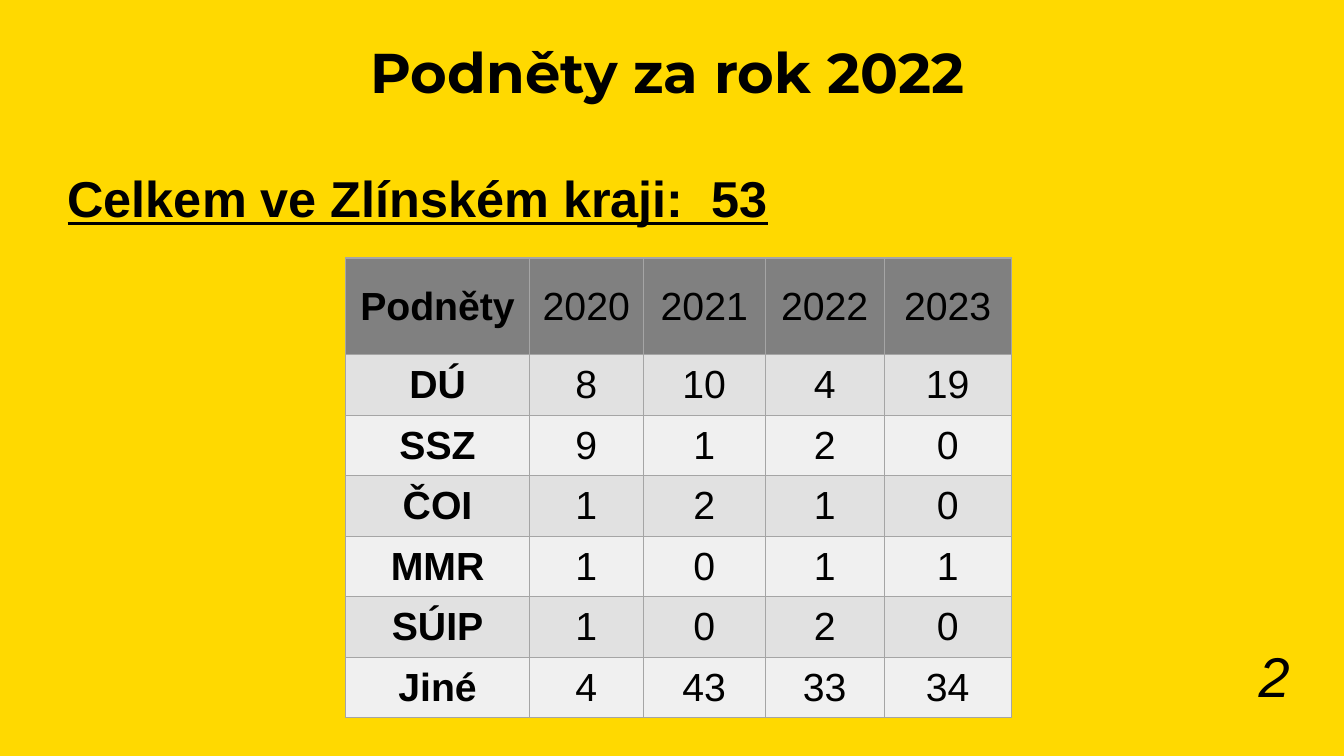
import pptx
import pptx.util
import pptx.dml.color
import pptx.enum.text
import pptx.oxml.ns
from lxml import etree

COLORS = {"background": "FFD900", "text": "000000", "header": "808080",
          "odd": "E1E1E1", "even": "F0F0F0", "border": "A5A5A5"}
ALIGN = pptx.enum.text.PP_ALIGN
ANCHOR = pptx.enum.text.MSO_ANCHOR
qn = pptx.oxml.ns.qn
Inches = pptx.util.Inches


def style(p, size, align, font="Arial", **flags):
    p.alignment = align
    for r in p.runs:
        r.font.name = font
        r.font.size = pptx.util.Pt(size)
        r.font.color.rgb = pptx.dml.color.RGBColor.from_string(COLORS["text"])
        for name, value in flags.items():
            setattr(r.font, name, value)


def place(sp, left, top, width, height, anchor):
    sp.left, sp.top = Inches(left), Inches(top)
    sp.width, sp.height = Inches(width), Inches(height)
    tf = sp.text_frame
    tf.word_wrap = True
    tf.auto_size = pptx.enum.text.MSO_AUTO_SIZE.NONE
    tf.vertical_anchor = anchor
    return tf


prs = pptx.Presentation()
prs.slide_width, prs.slide_height = Inches(13.33), Inches(7.5)
s = prs.slides.add_slide(prs.slide_layouts[1])
s.background.fill.solid()
s.background.fill.fore_color.rgb = pptx.dml.color.RGBColor.from_string(COLORS["background"])

# Title
tf = place(s.shapes.title, 0.46, 0.4, 12.32, 1.02, ANCHOR.TOP)
tf.text = "Podněty za rok 2022"
p = tf.paragraphs[0]
p.line_spacing = 0.9
style(p, 40, ALIGN.CENTER, "Montserrat", bold=True)

# Regional total
tf = place(s.placeholders[1], 0.57, 1.61, 12.32, 5.65, ANCHOR.TOP)
tf.text = "Celkem ve Zlínském kraji:  53"
p = tf.paragraphs[0]
pPr = p._p.get_or_add_pPr()
pPr.set("marL", "0")
pPr.set("indent", "0")
etree.SubElement(pPr, qn("a:buNone"))
p.space_before = pptx.util.Pt(0)
style(p, 36, ALIGN.LEFT, bold=True, underline=True)

# Slide number
tf = place(s.shapes.add_textbox(0, 0, 0, 0), 9.89, 6.51, 3, 0.57, ANCHOR.BOTTOM)
tf.text = "2"
style(tf.paragraphs[0], 40, ALIGN.RIGHT, italic=True)

# Table of complaints by authority and year
rows = [
    ["Podněty ", 2020, 2021, 2022, 2023],
    ["DÚ", 8, 10, 4, 19],
    ["SSZ", 9, 1, 2, 0],
    ["ČOI", 1, 2, 1, 0],
    ["MMR", 1, 0, 1, 1],
    ["SÚIP", 1, 0, 2, 0],
    ["Jiné", 4, 43, 33, 34],
]
widths = [1.82, 1.13, 1.21, 1.18, 1.26]
heights = [0.96] + [0.6] * (len(rows) - 1)
table = s.shapes.add_table(len(rows), len(widths), Inches(3.43), Inches(2.56),
                           Inches(sum(widths)), Inches(sum(heights))).table
for column, width in zip(table.columns, widths):
    column.width = Inches(width)
for i, values in enumerate(rows):
    table.rows[i].height = Inches(heights[i])
    shade = "header" if i == 0 else "odd" if i % 2 else "even"
    for j, value in enumerate(values):
        cell = table.cell(i, j)
        cell.text = str(value)
        cell.vertical_anchor = ANCHOR.MIDDLE
        style(cell.text_frame.paragraphs[0], 28, ALIGN.CENTER, bold=j == 0)

        # Borders come before the fill in the cell properties
        tcPr = cell._tc.get_or_add_tcPr()
        for side in ("lnL", "lnR", "lnT", "lnB"):
            ln = etree.SubElement(tcPr, qn("a:" + side), w=str(pptx.util.Pt(1)))
            line_fill = etree.SubElement(ln, qn("a:solidFill"))
            etree.SubElement(line_fill, qn("a:srgbClr"), val=COLORS["border"])
        cell.fill.solid()
        cell.fill.fore_color.rgb = pptx.dml.color.RGBColor.from_string(COLORS[shade])

prs.save("out.pptx")
